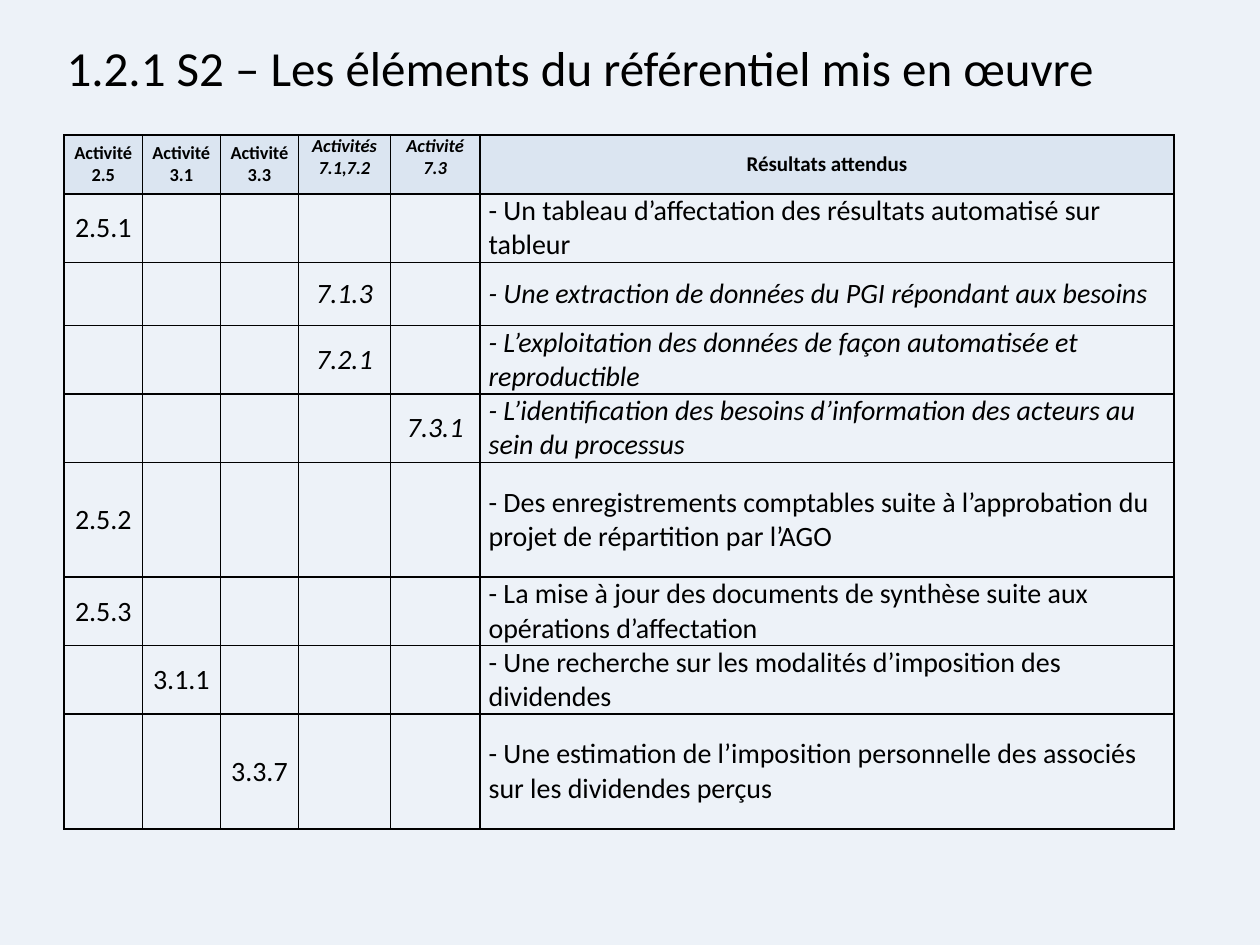
from dataclasses import dataclass

from lxml.etree import SubElement
from pptx import Presentation
from pptx.dml.color import RGBColor
from pptx.enum.text import MSO_ANCHOR, PP_ALIGN
from pptx.oxml.ns import qn
from pptx.util import Inches, Pt


@dataclass(frozen=True)
class Theme:
    font: str = "Calibri"
    ink: str = "000000"
    back: str = "EDF2F8"
    head: str = "DBE5F1"
    title: float = 28
    label: float = 10.5
    result: float = 12
    body: float = 16
    rule: float = 1


class Deck:
    def __init__(self, theme):
        self.theme = theme
        self.prs = Presentation()
        self.prs.slide_width, self.prs.slide_height = Inches(10), Inches(7.5)
        self.slide = self.prs.slides.add_slide(self.prs.slide_layouts[6])
        fill = self.slide.background.fill
        fill.solid()
        fill.fore_color.rgb = RGBColor.from_string(theme.back)

    def text(self, frame, words, size, bold=False, italic=False, align=PP_ALIGN.LEFT):
        para = frame.paragraphs[0]
        para.alignment = align
        run = para.add_run()
        run.text = words
        font = run.font
        font.name, font.size = self.theme.font, Pt(size)
        font.bold, font.italic = bold, italic
        font.color.rgb = RGBColor.from_string(self.theme.ink)

    def title(self, words, left, top, width, height):
        box = self.slide.shapes.add_textbox(
            Inches(left), Inches(top), Inches(width), Inches(height))
        frame = box.text_frame
        frame.word_wrap = True
        frame.vertical_anchor = MSO_ANCHOR.MIDDLE
        self.text(frame, words, self.theme.title)

    def border(self, cell):
        props = cell._tc.get_or_add_tcPr()
        for side in ("lnL", "lnR", "lnT", "lnB"):
            line = SubElement(props, qn(f"a:{side}"), w=str(Pt(self.theme.rule)))
            fill = SubElement(line, qn("a:solidFill"))
            SubElement(fill, qn("a:srgbClr"), val=self.theme.ink)

    def table(self, left, top, cols, rows):
        shape = self.slide.shapes.add_table(
            len(rows), len(cols), Inches(left), Inches(top),
            Inches(sum(cols)), Inches(sum(rows)))
        grid = shape.table
        grid.first_row = grid.horz_banding = False
        for col, width in zip(grid.columns, cols):
            col.width = Inches(width)
        for row, height in zip(grid.rows, rows):
            row.height = Inches(height)
        for cell in grid.iter_cells():
            self.border(cell)
            cell.fill.background()
            cell.margin_left = cell.margin_right = Inches(0.07)
            cell.margin_top = cell.margin_bottom = 0
            cell.vertical_anchor = MSO_ANCHOR.MIDDLE
        return grid

    def header(self, cell, words, size, italic):
        cell.fill.solid()
        cell.fill.fore_color.rgb = RGBColor.from_string(self.theme.head)
        if italic:
            cell.vertical_anchor = MSO_ANCHOR.TOP
        self.text(cell.text_frame, words, size, True, italic, PP_ALIGN.CENTER)


# Content: italics mark the activities of process 7
HEADS = ["Activité 2.5", "Activité 3.1", "Activité 3.3",
         "Activités 7.1,7.2", "Activité 7.3", "Résultats attendus"]
COLS = [0.62, 0.62, 0.62, 0.73, 0.71, 5.51]
SLANT = (3, 4)
# Column of the code, code, expected result, row height
ITEMS = [
    (0, "2.5.1", "- Un tableau d’affectation des résultats automatisé sur tableur", 0.45),
    (3, "7.1.3", "- Une extraction de données du PGI répondant aux besoins", 0.5),
    (3, "7.2.1", "- L’exploitation des données de façon automatisée et reproductible", 0.5),
    (4, "7.3.1", "- L’identification des besoins d’information des acteurs au sein du processus", 0.5),
    (0, "2.5.2", "- Des enregistrements comptables suite à l’approbation du projet de répartition par l’AGO", 0.91),
    (0, "2.5.3", "- La mise à jour des documents de synthèse suite aux opérations d’affectation", 0.5),
    (1, "3.1.1", "- Une recherche sur les modalités d’imposition des dividendes", 0.45),
    (2, "3.3.7", "- Une estimation de l’imposition personnelle des associés sur les dividendes perçus", 0.91),
]


def main():
    theme = Theme()
    deck = Deck(theme)

    # Table
    last = len(COLS) - 1
    grid = deck.table(0.51, 1.07, COLS, [0.47] + [item[3] for item in ITEMS])
    for col, words in enumerate(HEADS):
        size = theme.result if col == last else theme.label
        deck.header(grid.cell(0, col), words, size, col in SLANT)
    for row, (col, code, words, _) in enumerate(ITEMS, 1):
        slant = col in SLANT
        deck.text(grid.cell(row, col).text_frame, code, theme.body,
                  italic=slant, align=PP_ALIGN.CENTER)
        deck.text(grid.cell(row, last).text_frame, words, theme.body, italic=slant)

    # Title
    deck.title("1.2.1 S2 – Les éléments du référentiel mis en œuvre", 0.43, 0.21, 9, 0.64)

    deck.prs.save("out.pptx")


if __name__ == "__main__":
    main()
